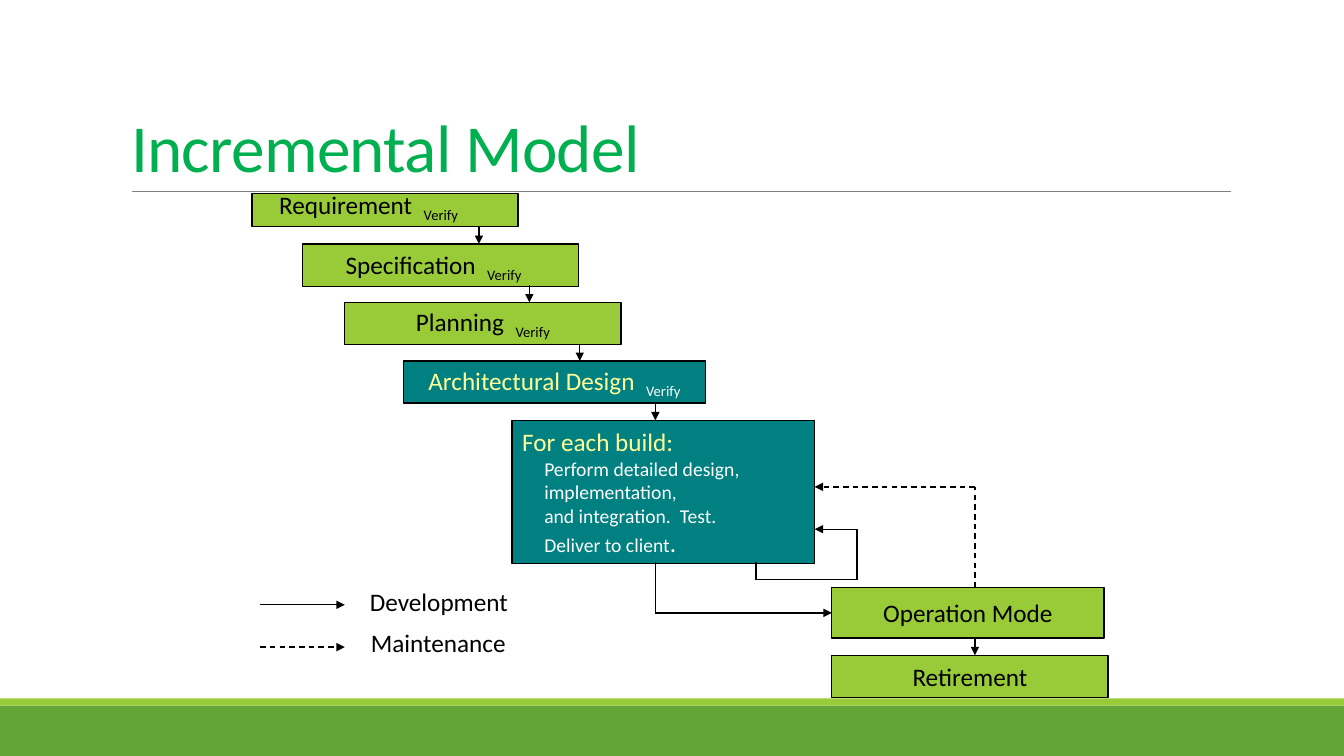
from lxml import etree
from pptx import Presentation
from pptx.dml.color import RGBColor
from pptx.enum.dml import MSO_LINE
from pptx.enum.shapes import MSO_CONNECTOR as Connector, MSO_SHAPE as Shape
from pptx.enum.text import MSO_ANCHOR as Anchor, PP_ALIGN as Align
from pptx.oxml.ns import qn
from pptx.util import Inches, Pt

BLACK, WHITE, GREY = "000000", "FFFFFF", "808080"
LIME, GREEN, TITLE_GREEN = "99CB38", "63A537", "00B050"
TEAL, YELLOW = "008080", "FFFF99"

TITLE = "Incremental Model"
# name: (left, top, width, height), fill
BOXES = {
    "requirement": ((2.5, 1.92, 2.64, 0.33), LIME),
    "specification": ((3, 2.42, 2.74, 0.42), LIME),
    "planning": ((3.42, 3, 2.74, 0.42), LIME),
    "design": ((4, 3.58, 3, 0.42), TEAL),
    "build": ((5.08, 4.17, 3, 1.42), TEAL),
    "operation": ((8.25, 5.83, 2.7, 0.5), LIME),
    "retirement": ((8.25, 6.5, 2.74, 0.42), LIME),
}
# box name, words, colour of the words, colour of the subscript
BOX_TEXTS = [
    ("planning", "Planning  ", BLACK, BLACK),
    ("design", "Architectural Design  ", YELLOW, WHITE),
    ("operation", "Operation Mode", BLACK, None),
    ("retirement", "Retirement", BLACK, None),
]
# place, words, has subscript, wraps
LABELS = [
    ((2.67, 1.83, 2.42, 0.4), "Requirement  ", True, True),
    ((3.33, 2.42, 2.12, 0.4), "Specification  ", True, False),
    ((3.57, 5.77, 1.59, 0.4), "Development", False, False),
    ((3.58, 6.17, 1.56, 0.4), "Maintenance", False, False),
]
BUILD_HEADING = "For each build:"
BUILD_STEPS = ["Perform detailed design,", "implementation,",
               "and integration.  Test.", "Deliver to client"]
# corner points, dashed; each route ends in an arrowhead
ROUTES = [
    ([(4.75, 2.25), (4.75, 2.42)], False),
    ([(5.25, 2.83), (5.25, 3)], False),
    ([(5.75, 3.42), (5.75, 3.58)], False),
    ([(6.5, 4), (6.5, 4.17)], False),
    ([(9.67, 6.33), (9.67, 6.5)], False),
    ([(2.58, 6), (3.42, 6)], False),
    ([(2.58, 6.42), (3.42, 6.42)], True),
    ([(9.67, 5.83), (9.67, 4.83), (8.08, 4.83)], True),
    ([(7.5, 5.58), (7.5, 5.75), (8.5, 5.75), (8.5, 5.25), (8.08, 5.25)], False),
]
DELIVERY = [(6.5, 5.58), (6.5, 6.08), (8.25, 6.08)]


def rgb(code):
    return RGBColor.from_string(code)


def inches(values):
    return [Inches(value) for value in values]


def add_text(para, text, size=18, color=BLACK, subscript=False, spacing=None):
    span = para.add_run()
    span.text = text
    span.font.name = "Calibri"
    span.font.size = Pt(size)
    span.font.color.rgb = rgb(color)
    properties = span._r.get_or_add_rPr()
    if subscript:
        properties.set("baseline", "-25000")
    if spacing is not None:
        properties.set("spc", str(int(spacing * 100)))


def add_box(page, place, fill, outline=None):
    box = page.shapes.add_shape(Shape.RECTANGLE, *inches(place))
    box.shadow.inherit = False
    box.fill.solid()
    box.fill.fore_color.rgb = rgb(fill)
    if outline:
        box.line.color.rgb = rgb(outline)
        box.line.width = Pt(1)
    else:
        box.line.fill.background()
    box.text_frame.vertical_anchor = Anchor.MIDDLE
    box.text_frame.word_wrap = False
    return box


def add_line(page, start, end, color=BLACK, width=1, dashed=False, arrow=False):
    line = page.shapes.add_connector(Connector.STRAIGHT, *inches(start + end))
    line.line.color.rgb = rgb(color)
    line.line.width = Pt(width)
    if dashed:
        line.line.dash_style = MSO_LINE.DASH
    if arrow:
        etree.SubElement(line.line._get_or_add_ln(), qn("a:tailEnd"), type="triangle")
    etree.SubElement(line._element.spPr, qn("a:effectLst"))
    return line


def add_route(page, points, dashed=False):
    """Draw the segments between points and return the last one."""
    for start, end in zip(points, points[1:]):
        line = add_line(page, start, end, dashed=dashed, arrow=end == points[-1])
    return line


def add_title(page):
    title = page.shapes.title
    title.left, title.top, title.width, title.height = inches((1.2, 0.31, 11, 1.59))
    title.text_frame.vertical_anchor = Anchor.BOTTOM
    para = title.text_frame.paragraphs[0]
    para.alignment = Align.LEFT
    para.line_spacing = 0.85
    add_text(para, TITLE, size=48, color=TITLE_GREEN, spacing=-0.5)


def add_build_text(frame):
    heading = frame.paragraphs[0]
    heading.alignment = Align.LEFT
    add_text(heading, BUILD_HEADING, color=YELLOW)
    for step in BUILD_STEPS:
        para = frame.add_paragraph()
        para.alignment = Align.LEFT
        para._p.get_or_add_pPr().set("marL", str(Inches(0.22)))
        add_text(para, step, size=14, color=WHITE)
    add_text(para, ".", color=WHITE)


def main():
    deck = Presentation()
    deck.slide_width, deck.slide_height = inches((13.33, 7.5))
    page = deck.slides.add_slide(deck.slide_layouts[5])

    add_box(page, (0, 7, 13.33, 0.5), GREEN)
    add_box(page, (0, 6.93, 13.33, 0.07), LIME)
    add_line(page, (1.31, 1.9), (12.21, 1.9), color=GREY, width=0.5)
    add_title(page)

    boxes = {name: add_box(page, place, fill, outline=BLACK)
             for name, (place, fill) in BOXES.items()}
    for name, words, color, verify_color in BOX_TEXTS:
        para = boxes[name].text_frame.paragraphs[0]
        para.alignment = Align.CENTER
        add_text(para, words, color=color)
        if verify_color:
            add_text(para, "Verify", color=verify_color, subscript=True)
    add_build_text(boxes["build"].text_frame)

    for place, words, verified, wraps in LABELS:
        frame = page.shapes.add_textbox(*inches(place)).text_frame
        frame.word_wrap = wraps
        add_text(frame.paragraphs[0], words)
        if verified:
            add_text(frame.paragraphs[0], "Verify", subscript=True)

    for points, dashed in ROUTES:
        add_route(page, points, dashed)
    add_route(page, DELIVERY).end_connect(boxes["operation"], 1)

    deck.save("out.pptx")


if __name__ == "__main__":
    main()
